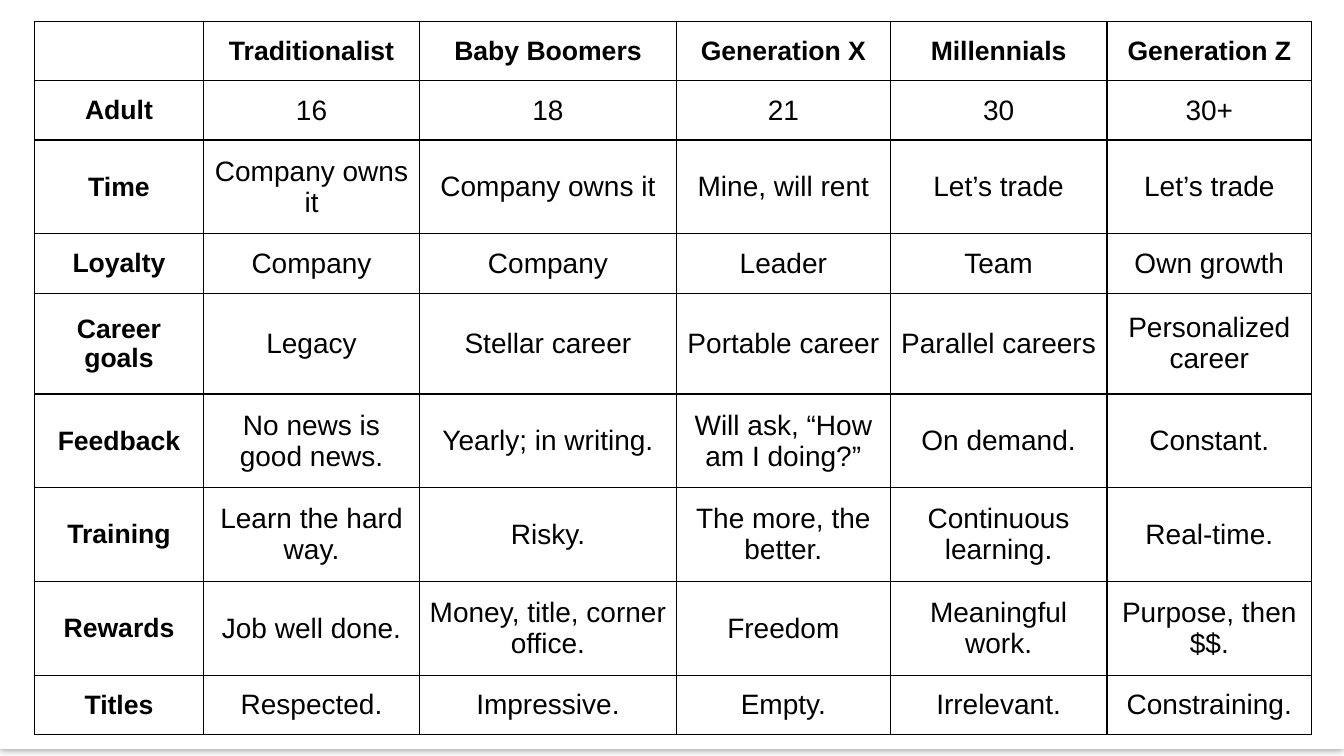
import lxml.etree
import pptx
import pptx.dml.color
import pptx.enum.shapes
import pptx.enum.text
import pptx.oxml.ns
import pptx.util

Inches = pptx.util.Inches
Pt = pptx.util.Pt
qn = pptx.oxml.ns.qn

BLACK, WHITE = "000000", "FFFFFF"
WIDTHS = [1.68, 2.14, 2.55, 2.12, 2.15, 2.03]
HEIGHTS = [0.59, 0.59, 0.93, 0.59, 1, 0.93, 0.93, 0.93, 0.59]
ROWS = [
    ["", "Traditionalist", "Baby Boomers", "Generation X", "Millennials", "Generation Z"],
    ["Adult", "16", "18", "21", "30", "30+"],
    ["Time", "Company owns it", "Company owns it", "Mine, will rent", "Let’s trade", "Let’s trade"],
    ["Loyalty", "Company", "Company", "Leader", "Team", "Own growth"],
    ["Career goals", "Legacy", "Stellar career", "Portable career", "Parallel careers",
     "Personalized career"],
    ["Feedback", "No news is good news.", "Yearly; in writing.", "Will ask, “How am I doing?”",
     "On demand.", "Constant."],
    ["Training", "Learn the hard way.", "Risky.", "The more, the better.",
     "Continuous learning.", "Real-time."],
    ["Rewards", "Job well done.", "Money, title, corner office.", "Freedom",
     "Meaningful work.", "Purpose, then $$."],
    ["Titles", "Respected.", "Impressive.", "Empty.", "Irrelevant.", "Constraining."],
]


def paint(fill, color):
    """Fill with a solid colour given as a hex string."""
    fill.solid()
    fill.fore_color.rgb = pptx.dml.color.RGBColor.from_string(color)


def add_node(parent, tag, **attrs):
    """Append an XML element with attributes and return it."""
    node = lxml.etree.SubElement(parent, qn(tag))
    for name, value in attrs.items():
        node.set(name, str(value))
    return node


def write(frame, text, size=20, bold=False, color=BLACK, font="Arial"):
    """Put centred, formatted text into a text frame."""
    para = frame.paragraphs[0]
    para.alignment = pptx.enum.text.PP_ALIGN.CENTER
    para.font.size = Pt(size)
    if text:
        run = para.add_run()
        run.text = text
        run.font.name = font
        run.font.size = Pt(size)
        run.font.bold = bold
        paint(run.font.fill, color)


def add_card(slide, width, height):
    """Add the white sheet with a soft shadow below it."""
    card = slide.shapes.add_shape(
        pptx.enum.shapes.MSO_SHAPE.RECTANGLE, 0, 0, Inches(width), Inches(height))
    paint(card.fill, WHITE)
    card.line.fill.background()
    card.shadow.inherit = False
    effects = card.element.spPr.find(qn("a:effectLst"))
    shadow = add_node(effects, "a:outerShdw", blurRad=Pt(5), dist=Pt(1.4),
                      dir=90 * 60000, algn="t", rotWithShape=0)
    color = add_node(shadow, "a:srgbClr", val=BLACK)
    add_node(color, "a:alpha", val=42000)


def add_border(cell, color=BLACK, width=1):
    """Draw a solid line on all four sides of a cell."""
    props = cell._tc.get_or_add_tcPr()
    for side in ("a:lnL", "a:lnR", "a:lnT", "a:lnB"):
        line = add_node(props, side, w=Pt(width))
        fill = add_node(line, "a:solidFill")
        add_node(fill, "a:srgbClr", val=color)


def add_grid(slide, left, top):
    """Add the table that compares the generations."""
    table = slide.shapes.add_table(
        len(ROWS), len(WIDTHS), Inches(left), Inches(top),
        Inches(sum(WIDTHS)), Inches(sum(HEIGHTS))).table
    table.first_row = table.horz_banding = False
    for column, width in zip(table.columns, WIDTHS):
        column.width = Inches(width)
    for row, height in zip(table.rows, HEIGHTS):
        row.height = Inches(height)
    for i, texts in enumerate(ROWS):
        for j, text in enumerate(texts):
            cell = table.cell(i, j)
            head = i == 0 or j == 0
            cell.vertical_anchor = pptx.enum.text.MSO_ANCHOR.MIDDLE
            cell.margin_left = cell.margin_right = Inches(0.1)
            cell.margin_top = cell.margin_bottom = Inches(0.05)
            add_border(cell)
            paint(cell.fill, WHITE)
            write(cell.text_frame, text, size=19 if head else 20, bold=head)


def main():
    """Build the slide and save it."""
    deck = pptx.Presentation()
    deck.slide_width, deck.slide_height = Inches(13.33), Inches(7.5)
    slide = deck.slides.add_slide(deck.slide_layouts[6])
    paint(slide.background.fill, WHITE)
    add_card(slide, 13.33, 7.43)
    add_grid(slide, 0.34, 0.21)
    deck.save("out.pptx")


if __name__ == "__main__":
    main()
